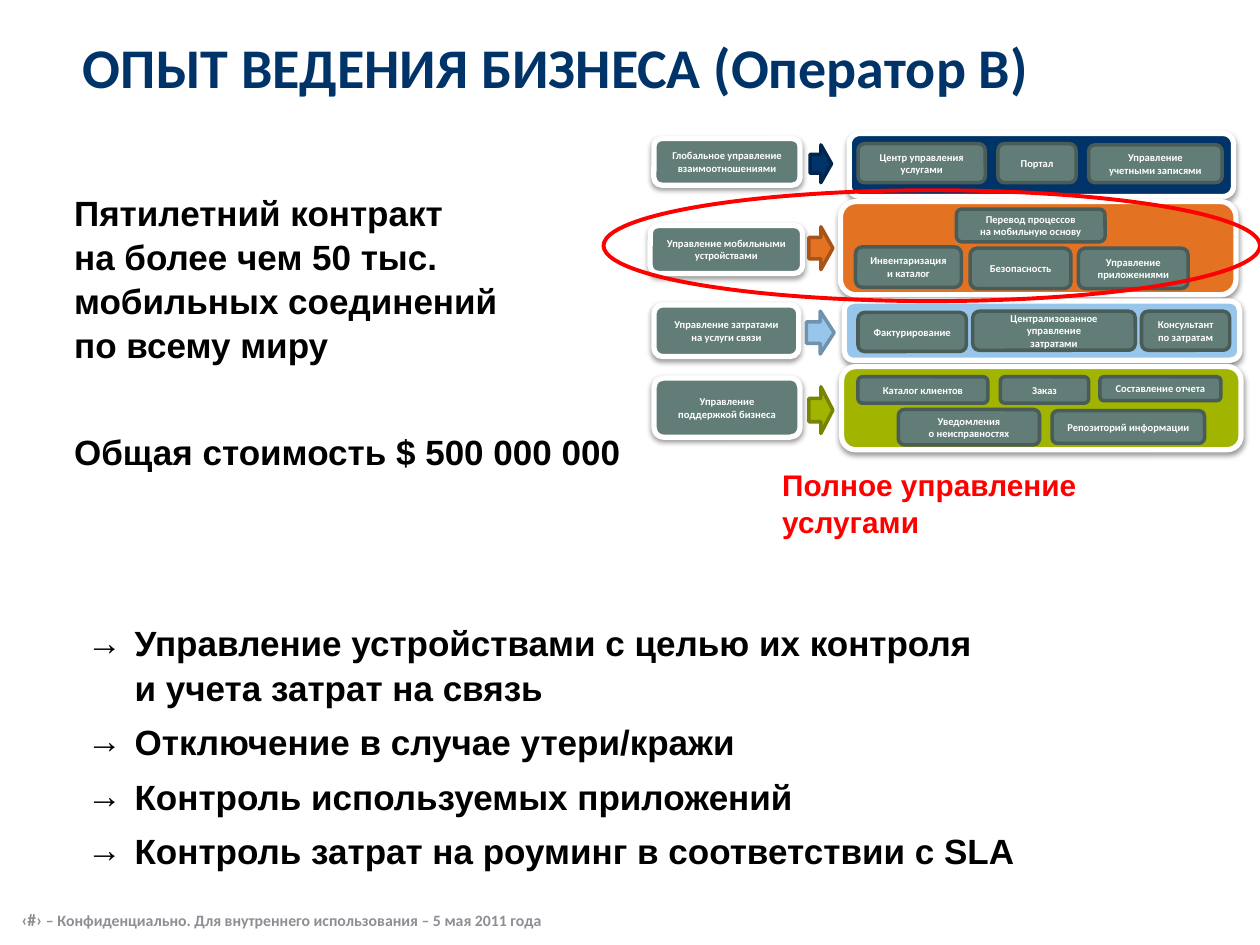
"""Build the slide about the business experience of Operator B."""
import pptx
import pptx.chart.data
import pptx.dml.color
import pptx.enum.shapes
import pptx.enum.text
import pptx.oxml
import pptx.oxml.ns
import pptx.util
from lxml import etree

Inches = pptx.util.Inches
Pt = pptx.util.Pt
RGBColor = pptx.dml.color.RGBColor
Shape = pptx.enum.shapes.MSO_SHAPE
Align = pptx.enum.text.PP_ALIGN
Anchor = pptx.enum.text.MSO_ANCHOR
qn = pptx.oxml.ns.qn

NAVY = RGBColor(0x00, 0x33, 0x68)
NAVY_EDGE = RGBColor(0x00, 0x26, 0x4D)
ORANGE = RGBColor(0xE3, 0x72, 0x22)
ORANGE_EDGE = RGBColor(0xA8, 0x54, 0x19)
SKY = RGBColor(0x98, 0xC6, 0xEA)
SKY_EDGE = RGBColor(0x70, 0x92, 0xAD)
LIME = RGBColor(0xA0, 0xB4, 0x00)
LIME_EDGE = RGBColor(0x76, 0x85, 0x00)
SLATE = RGBColor(0x62, 0x7D, 0x77)
SLATE_EDGE = RGBColor(0x49, 0x5C, 0x58)
GREY = RGBColor(0x8E, 0x8E, 0x95)
WHITE = RGBColor(0xFF, 0xFF, 0xFF)
BLACK = RGBColor(0x00, 0x00, 0x00)
RED = RGBColor(0xFF, 0x00, 0x00)

deck = pptx.Presentation()
deck.slide_width = Inches(10)
deck.slide_height = Inches(7.5)
page = deck.slides.add_slide(deck.slide_layouts[6])


def write(para, text, size, font, color):
    for index, line in enumerate(text.split("\n")):
        if index:
            para.add_line_break()
        span = para.add_run()
        span.text = line
        span.font.size = Pt(size)
        span.font.name = font
        span.font.bold = True
        span.font.color.rgb = color


def draw(kind, place, fill, edge, width, text="", raised=False):
    box = page.shapes.add_shape(kind, *map(Inches, place))
    box.shadow.inherit = False
    if fill is None:
        box.fill.background()
    else:
        box.fill.solid()
        box.fill.fore_color.rgb = fill
    box.line.color.rgb = edge
    box.line.width = Pt(width)
    if raised:
        effects = box._element.spPr.find(qn("a:effectLst"))
        shadow = etree.SubElement(effects, qn("a:outerShdw"), blurRad=str(Pt(3.1)),
                                  dist=str(Pt(1.6)), dir="5400000", rotWithShape="0")
        tint = etree.SubElement(shadow, qn("a:srgbClr"), val="000000")
        etree.SubElement(tint, qn("a:alpha"), val="38000")
    if text:
        box.text_frame.word_wrap = True
        box.text_frame.vertical_anchor = Anchor.MIDDLE
        para = box.text_frame.paragraphs[0]
        para.alignment = Align.CENTER
        write(para, text, 6, "Calibri", WHITE)


footer = page.shapes.add_textbox(Inches(0.17), Inches(7.13), Inches(4.34), Inches(0.34)).text_frame
footer.word_wrap = True
footer.vertical_anchor = Anchor.MIDDLE
footer.margin_left = footer.margin_top = footer.margin_bottom = 0
write(footer.paragraphs[0], "‹#› ", 10, "Calibri", GREY)
write(footer.paragraphs[0], "– Конфиденциально. Для внутреннего использования – 5 мая 2011 года",
      9, "Calibri", GREY)

title = page.shapes.add_textbox(Inches(0.56), Inches(0.05), Inches(9.05), Inches(0.98)).text_frame
title.word_wrap = True
title.vertical_anchor = Anchor.MIDDLE
title.margin_bottom = 0
title.paragraphs[0].line_spacing = Pt(33)
write(title.paragraphs[0], "ОПЫТ ВЕДЕНИЯ БИЗНЕСА (Оператор В)", 32, "Calibri", NAVY)

service_rows = [
    (NAVY, NAVY_EDGE, (6.74, 1.06, 3.05, 0.5), (6.43, 1.15, 0.17, 0.3),
     (5.19, 1.1, 1.16, 0.37), "Глобальное управление взаимоотношениями", [
         ((6.81, 1.14, 1.01, 0.31), "Центр управления услугами"),
         ((7.92, 1.14, 0.62, 0.31), "Портал"),
         ((8.64, 1.15, 1.06, 0.3), "Управление\nучетными записями")]),
    (ORANGE, ORANGE_EDGE, (6.67, 1.6, 3.14, 0.74), (6.42, 1.8, 0.19, 0.34),
     (5.16, 1.79, 1.21, 0.38), "Управление мобильными устройствами", [
         ((7.59, 1.66, 1.18, 0.26), "Перевод процессов\nна мобильную основу"),
         ((6.79, 1.96, 0.84, 0.32), "Инвентаризация и каталог"),
         ((7.7, 1.97, 0.8, 0.32), "Безопасность"),
         ((8.56, 1.97, 0.87, 0.32), "Управление\nприложениями")]),
    (SKY, SKY_EDGE, (6.7, 2.39, 3.14, 0.47), (6.4, 2.47, 0.22, 0.34),
     (5.19, 2.42, 1.15, 0.41), "Управление затратами на услуги связи", [
         ((6.81, 2.48, 0.86, 0.31), "Фактурирование"),
         ((7.72, 2.47, 1.29, 0.31), "Централизованное управление\nзатратами"),
         ((9.06, 2.47, 0.7, 0.31), "Консультант\nпо затратам")]),
    (LIME, LIME_EDGE, (6.68, 2.91, 3.17, 0.66), (6.42, 3.07, 0.19, 0.37),
     (5.19, 3, 1.16, 0.47), "Управление поддержкой бизнеса", [
         ((6.81, 2.99, 1.03, 0.21), "Каталог клиентов"),
         ((7.13, 3.25, 1.12, 0.28), "Уведомления\nо неисправностях"),
         ((8.73, 2.99, 0.96, 0.19), "Составление отчета"),
         ((8.35, 3.26, 1.21, 0.26), "Репозиторий информации"),
         ((7.94, 2.99, 0.7, 0.21), "Заказ")]),
]
for color, edge, panel, arrow, area, area_name, services in service_rows:
    draw(Shape.ROUNDED_RECTANGLE, panel, color, WHITE, 3, raised=True)
    for place, name in services:
        draw(Shape.ROUNDED_RECTANGLE, place, SLATE, SLATE_EDGE, 2, name)
    draw(Shape.ROUNDED_RECTANGLE, area, SLATE, WHITE, 3, area_name, raised=True)
    draw(Shape.RIGHT_ARROW, arrow, color, edge, 2)
draw(Shape.OVAL, (4.79, 1.51, 5.21, 0.88), None, RED, 2.25)

contract = ["Пятилетний контракт\nна более чем 50\u00a0тыс.\nмобильных соединений\nпо всему миру".replace("\u00a0", " "),
            "Общая стоимость $ 500 000 000"]
benefits = ["Управление устройствами с целью их контроля\nи учета затрат на связь",
            "Отключение в случае утери/кражи",
            "Контроль используемых приложений",
            "Контроль затрат на роуминг в соответствии с SLA"]
text_blocks = [
    ((0.49, 1.45, 4.57, 2.29), 0.05, contract, 20, BLACK, 36, False),
    ((0.59, 4.45, 8.19, 2.43), 0.47, benefits, 20, BLACK, 6, True),
    ((6.11, 3.64, 3.22, 0.67), 0.05, ["Полное управление услугами"], 17, RED, 0, False),
]
for place, top_inset, lines, size, color, gap, bulleted in text_blocks:
    frame = page.shapes.add_textbox(*map(Inches, place)).text_frame
    frame.word_wrap = lines is not contract
    frame.margin_top = Inches(top_inset)
    for index, line in enumerate(lines):
        para = frame.add_paragraph() if index else frame.paragraphs[0]
        para.line_spacing = 1.05
        if index:
            para.space_before = Pt(gap)
        if bulleted:
            props = para._p.get_or_add_pPr()
            props.set("marL", str(Inches(0.38)))
            props.set("indent", str(-Inches(0.38)))
            etree.SubElement(props, qn("a:buFont"), typeface="Arial")
            etree.SubElement(props, qn("a:buChar"), char="→")
        write(para, line, size, "Arial", color)

deck.save("out.pptx")
